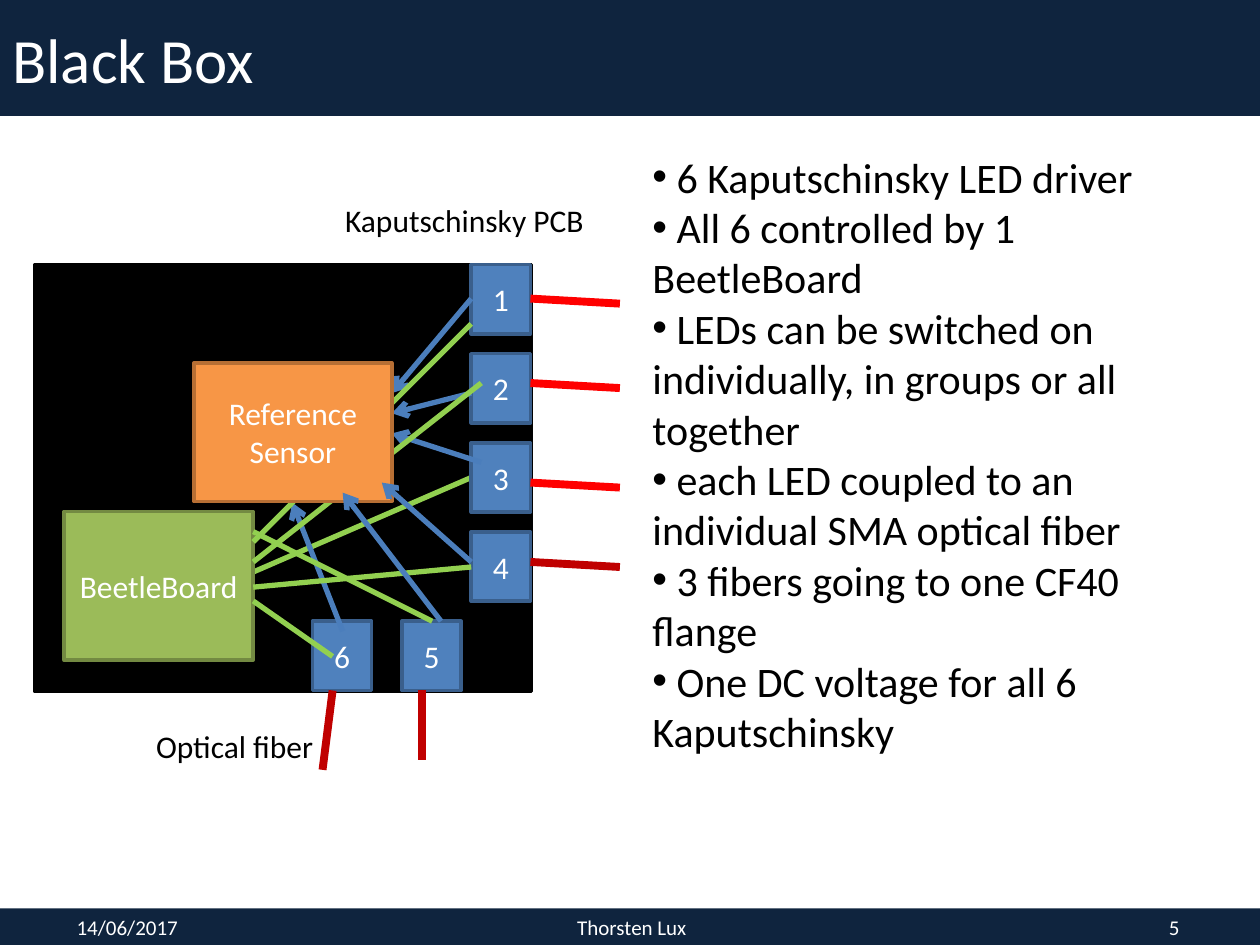
import lxml.etree
import pptx
import pptx.dml.color
import pptx.enum.shapes
import pptx.enum.text
import pptx.oxml.ns
import pptx.util

Inches = pptx.util.Inches
Pt = pptx.util.Pt
RGBColor = pptx.dml.color.RGBColor
ALIGN = pptx.enum.text.PP_ALIGN
ANCHOR = pptx.enum.text.MSO_ANCHOR
qn = pptx.oxml.ns.qn

NAVY = RGBColor(0x0F, 0x24, 0x3E)
BLACK = RGBColor(0, 0, 0)
WHITE = RGBColor(0xFF, 0xFF, 0xFF)
BLUE = RGBColor(0x4F, 0x81, 0xBD)
BLUE_EDGE = RGBColor(0x3A, 0x5F, 0x8C)
SIGNAL_BLUE = RGBColor(0x4B, 0x7E, 0xBC)
GREEN = RGBColor(0x9B, 0xBB, 0x59)
GREEN_EDGE = RGBColor(0x73, 0x8A, 0x42)
CONTROL_GREEN = RGBColor(0x92, 0xD0, 0x50)
ORANGE = RGBColor(0xF7, 0x96, 0x46)
ORANGE_EDGE = RGBColor(0xB7, 0x6F, 0x34)
RED = RGBColor(0xFF, 0, 0)
DARK_RED = RGBColor(0xC0, 0, 0)

deck = pptx.Presentation()
deck.slide_width = Inches(10)
deck.slide_height = Inches(7.5)
slide = deck.slides.add_slide(deck.slide_layouts[6])


def add_block(bounds, fill, edge=None, label=None):
    block = slide.shapes.add_shape(
        pptx.enum.shapes.MSO_SHAPE.RECTANGLE, *map(Inches, bounds))
    block.shadow.inherit = False
    block.fill.solid()
    block.fill.fore_color.rgb = fill
    if edge is None:
        block.line.fill.background()
    else:
        block.line.color.rgb = edge
        block.line.width = Pt(2)
    if label:
        write(block.text_frame, [label], 18, WHITE, ALIGN.CENTER, ANCHOR.MIDDLE)


def write(frame, lines, size, color, align=ALIGN.LEFT, anchor=ANCHOR.TOP):
    """Fill a text frame with one paragraph per line."""
    frame.word_wrap = True
    frame.vertical_anchor = anchor
    frame.text = "\n".join(lines)
    font_format = {"name": "Calibri", "size": Pt(size)}
    for paragraph in frame.paragraphs:
        paragraph.alignment = align
        font = paragraph.runs[0].font
        font.color.rgb = color
        for name, value in font_format.items():
            setattr(font, name, value)


# Header, footer and the box itself
add_block((0, 7.21, 10, 0.29), NAVY)
add_block((0, 0, 10, 0.92), NAVY)
add_block((0.28, 2.1, 3.94, 3.39), BLACK, BLACK)

for bounds, text, size, align in [
    ((0, 0, 10, 0.92), "Black Box", 36, ALIGN.LEFT),
    ((0.51, 7.21, 2.33, 0.29), "14/06/2017", 12, ALIGN.LEFT),
    ((3.43, 7.21, 3.17, 0.29), "Thorsten Lux", 12, ALIGN.CENTER),
    ((7.13, 7.21, 2.33, 0.29), "5", 12, ALIGN.RIGHT),
]:
    banner = slide.shapes.add_textbox(*map(Inches, bounds))
    write(banner.text_frame, [text], size, WHITE, align, ANCHOR.MIDDLE)

# LED drivers: four down the right side, two along the bottom
drivers = [(str(row + 1), 3.74, 2.1 + row * 0.707) for row in range(4)]
drivers += [("6", 2.48, 4.93), ("5", 3.19, 4.93)]

# Wires lie under or over the blocks, so each layer is drawn in turn
wires_under_drivers = [(CONTROL_GREEN, 2.01, 4.54, 3.74, 3.79)]
wires_under_board = [
    (SIGNAL_BLUE, 3.74, 2.37, 3.11, 3.12),
    (SIGNAL_BLUE, 3.74, 3.12, 3.11, 3.28),
    (SIGNAL_BLUE, 3.82, 3.67, 3.11, 3.44),
    (SIGNAL_BLUE, 2.72, 5.01, 2.32, 3.99),
    (RED, 4.21, 2.37, 4.92, 2.41),
    (RED, 4.21, 3.04, 4.92, 3.08),
    (DARK_RED, 4.21, 4.46, 4.92, 4.5),
    (RED, 4.21, 3.83, 4.92, 3.87),
    (DARK_RED, 3.35, 5.48, 3.35, 6.03),
    (DARK_RED, 2.64, 5.48, 2.56, 6.11),
]
wires_under_sensor = [
    (CONTROL_GREEN, 2.01, 4.66, 3.74, 4.5),
    (CONTROL_GREEN, 2.01, 4.3, 3.74, 2.57),
    (CONTROL_GREEN, 2.01, 4.46, 3.82, 3.04),
]
wires_on_top = [
    (CONTROL_GREEN, 2.01, 4.77, 2.64, 5.21),
    (CONTROL_GREEN, 2.01, 4.22, 3.43, 4.93),
    (SIGNAL_BLUE, 3.5, 4.93, 2.72, 3.91),
    (SIGNAL_BLUE, 3.74, 4.46, 3.03, 3.83),
]
driver_blocks = [((left, top, 0.47, 0.55), BLUE, BLUE_EDGE, number)
                 for number, left, top in drivers]
board = ((0.51, 4.06, 1.5, 1.18), GREEN, GREEN_EDGE, "BeetleBoard")
sensor = ((1.54, 2.88, 1.57, 1.1), ORANGE, ORANGE_EDGE, "Reference Sensor")

for wires, blocks in [
    (wires_under_drivers, driver_blocks),
    (wires_under_board, [board]),
    (wires_under_sensor, [sensor]),
    (wires_on_top, []),
]:
    for color, *ends in wires:
        wire = slide.shapes.add_connector(
            pptx.enum.shapes.MSO_CONNECTOR.STRAIGHT, *map(Inches, ends))
        wire.line.color.rgb = color
        wire.line.width = Pt(4.5 if color in (RED, DARK_RED) else 3)
        if color == SIGNAL_BLUE:
            line_xml = wire.line._get_or_add_ln()
            lxml.etree.SubElement(line_xml, qn("a:tailEnd"), type="arrow")
        lxml.etree.SubElement(wire._element.spPr, qn("a:effectLst"))
    for block in blocks:
        add_block(*block)

# Captions and the list of features
for bounds, caption in [
    ((2.64, 1.55, 2.91, 0.4), "Kaputschinsky PCB"),
    ((1.14, 5.72, 1.73, 0.4), "Optical fiber"),
]:
    caption_box = slide.shapes.add_textbox(*map(Inches, bounds))
    write(caption_box.text_frame, [caption], 18, BLACK)

features = [
    " 6 Kaputschinsky LED driver",
    " All 6 controlled by 1 BeetleBoard",
    " LEDs can be switched on individually, in groups or all together",
    " each LED coupled to an individual SMA optical fiber",
    " 3 fibers going to one CF40 flange",
    " One DC voltage for all 6 Kaputschinsky",
]
feature_list = slide.shapes.add_textbox(
    Inches(5.08), Inches(1.15), Inches(4.65), Inches(4.95))
write(feature_list.text_frame, features, 24, BLACK)
for paragraph in feature_list.text_frame.paragraphs:
    properties = paragraph._p.get_or_add_pPr()
    lxml.etree.SubElement(properties, qn("a:buFont"), typeface="Arial")
    lxml.etree.SubElement(properties, qn("a:buChar"), char="•")

deck.save("out.pptx")
